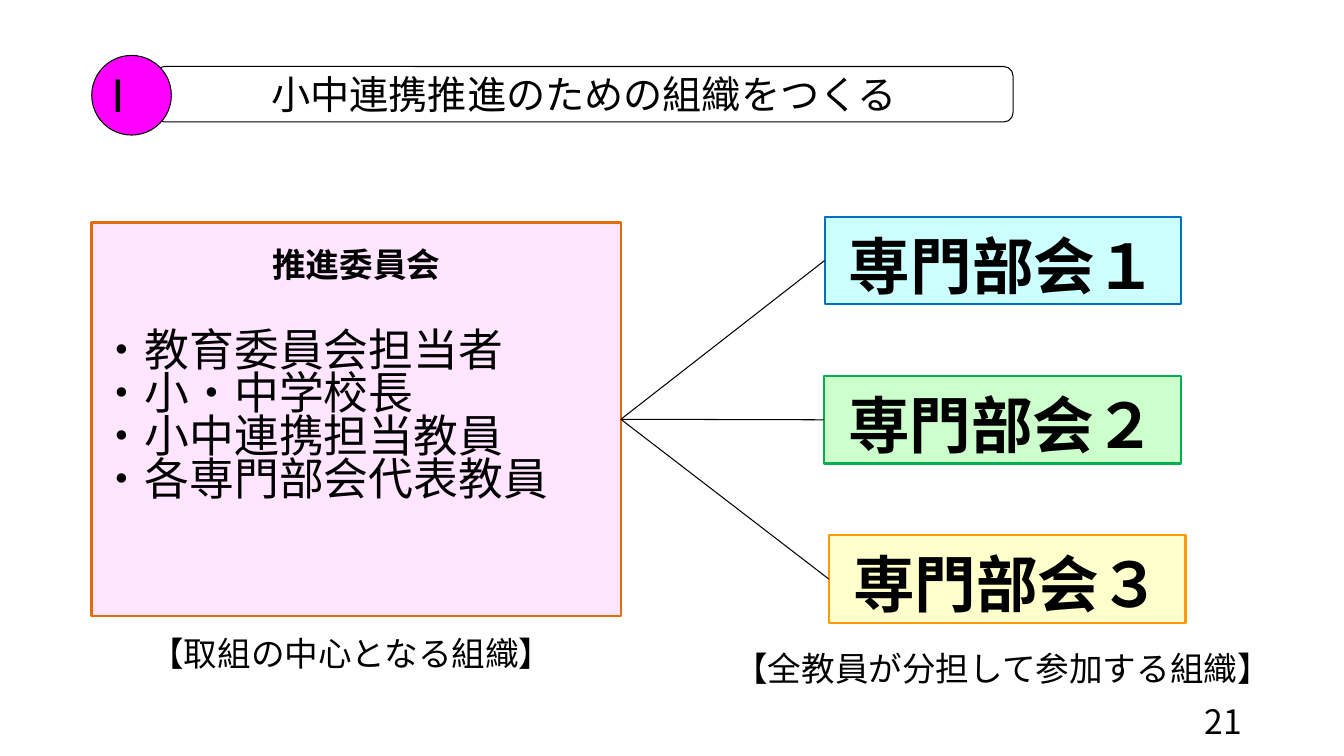
from lxml import etree
from pptx import Presentation
from pptx.dml.color import RGBColor
from pptx.enum import shapes, text
from pptx.oxml.ns import qn
from pptx.util import Pt

BLACK = RGBColor(0, 0, 0)
WHITE = RGBColor(255, 255, 255)
MAGENTA = RGBColor(255, 0, 255)
PINK = RGBColor(0xFF, 0xE5, 0xFF)
ORANGE = RGBColor(0xE3, 0x6C, 0x0A)
GOTHIC, SERIF = "Noto Sans CJK JP", "TeX Gyre Schola"
LEFT, CENTER, RIGHT = text.PP_ALIGN.LEFT, text.PP_ALIGN.CENTER, text.PP_ALIGN.RIGHT
JUSTIFY = text.PP_ALIGN.JUSTIFY
KIND = shapes.MSO_SHAPE

TITLE = "小中連携推進のための組織をつくる"
NUMERAL = "Ⅰ"
COMMITTEE = "推進委員会"
MEMBERS = ["・教育委員会担当者", "・小・中学校長", "・小中連携担当教員", "・各専門部会代表教員"]
# name, left, fill, line
SECTIONS = [
    ("専門部会１", 589, RGBColor(0xCC, 0xFF, 0xFF), RGBColor(0x00, 0x70, 0xC0)),
    ("専門部会２", 588.5, RGBColor(0xCD, 0xFF, 0xCD), RGBColor(0x00, 0xB0, 0x50)),
    ("専門部会３", 592, RGBColor(0xFF, 0xFF, 0xCC), RGBColor(0xFF, 0x99, 0x00)),
]
SECTION_TOP, SECTION_PITCH = 154.8, 113.75
# text, box, alignment
CAPTIONS = [
    ("【取組の中心となる組織】", (101.5, 451.5, 306, 34), LEFT),
    ("【全教員が分担して参加する組織】", (513.4, 462.2, 405.4, 34), CENTER),
    ("21", (678.2, 500.4, 216, 28.8), RIGHT),
]


def add_paragraph(shape, content, size, align, bold=False, name=GOTHIC, spacing=None, before=0):
    frame = shape.text_frame
    paragraph = frame.add_paragraph() if frame.text else frame.paragraphs[0]
    paragraph.text = content
    paragraph.alignment = align
    paragraph.line_spacing = spacing
    paragraph.space_before = Pt(before)
    font = paragraph.font
    font.size, font.bold, font.name = Pt(size), bold, name
    font.color.rgb = BLACK
    defaults = paragraph._p.pPr.find(qn("a:defRPr"))
    etree.SubElement(defaults, qn("a:ea")).set("typeface", name)


def set_frame(shape):
    frame = shape.text_frame
    frame.word_wrap = True
    frame.vertical_anchor = text.MSO_ANCHOR.TOP
    frame.margin_left = frame.margin_right = Pt(5.8)
    frame.margin_top = frame.margin_bottom = Pt(0.7)


def add_box(slide, kind, box, fill, line, width):
    shape = slide.shapes.add_shape(kind, *map(Pt, box))
    shape.shadow.inherit = False
    shape.fill.solid()
    shape.fill.fore_color.rgb = fill
    shape.line.color.rgb = line
    shape.line.width = Pt(width)
    set_frame(shape)
    return shape


def join(slide, start, end):
    """Draw a line from the right side of start to the left side of end."""
    line = slide.shapes.add_connector(shapes.MSO_CONNECTOR.STRAIGHT, 0, 0, 0, 0)
    line.begin_connect(start, 3)
    line.end_connect(end, 1)
    line.line.color.rgb = BLACK
    line.line.width = Pt(0.75)
    etree.SubElement(line._element.spPr, qn("a:effectLst"))


def main():
    presentation = Presentation()
    presentation.slide_width, presentation.slide_height = Pt(960), Pt(540)
    slide = presentation.slides.add_slide(presentation.slide_layouts[6])

    title = add_box(slide, KIND.ROUNDED_RECTANGLE, (110.9, 47.5, 612.7, 39.6), WHITE, BLACK, 0.75)
    add_paragraph(title, TITLE, 28, CENTER)
    badge = add_box(slide, KIND.OVAL, (65.5, 39.6, 56.9, 56.9), MAGENTA, BLACK, 0.75)
    add_paragraph(badge, NUMERAL, 32, JUSTIFY, name=SERIF, before=3.5)

    committee = add_box(slide, KIND.RECTANGLE, (65.5, 159.1, 378, 280.8), PINK, ORANGE, 1.75)
    add_paragraph(committee, COMMITTEE, 24, CENTER, bold=True, spacing=1.5)
    for index, member in enumerate(MEMBERS):
        add_paragraph(committee, member, 32, LEFT, spacing=0.8, before=0 if index else 34)

    for index, (name, left, fill, line) in enumerate(SECTIONS):
        box = (left, SECTION_TOP + index * SECTION_PITCH, 254.9, 62.6)
        section = add_box(slide, KIND.RECTANGLE, box, fill, line, 1.5)
        add_paragraph(section, name, 44, CENTER, bold=True, spacing=Pt(60))
        join(slide, committee, section)

    for content, box, align in CAPTIONS:
        caption = slide.shapes.add_textbox(*map(Pt, box))
        set_frame(caption)
        add_paragraph(caption, content, 24, align)
    caption.text_frame.margin_right = Pt(7.2)
    caption.text_frame.vertical_anchor = text.MSO_ANCHOR.MIDDLE

    presentation.save("out.pptx")


if __name__ == "__main__":
    main()
